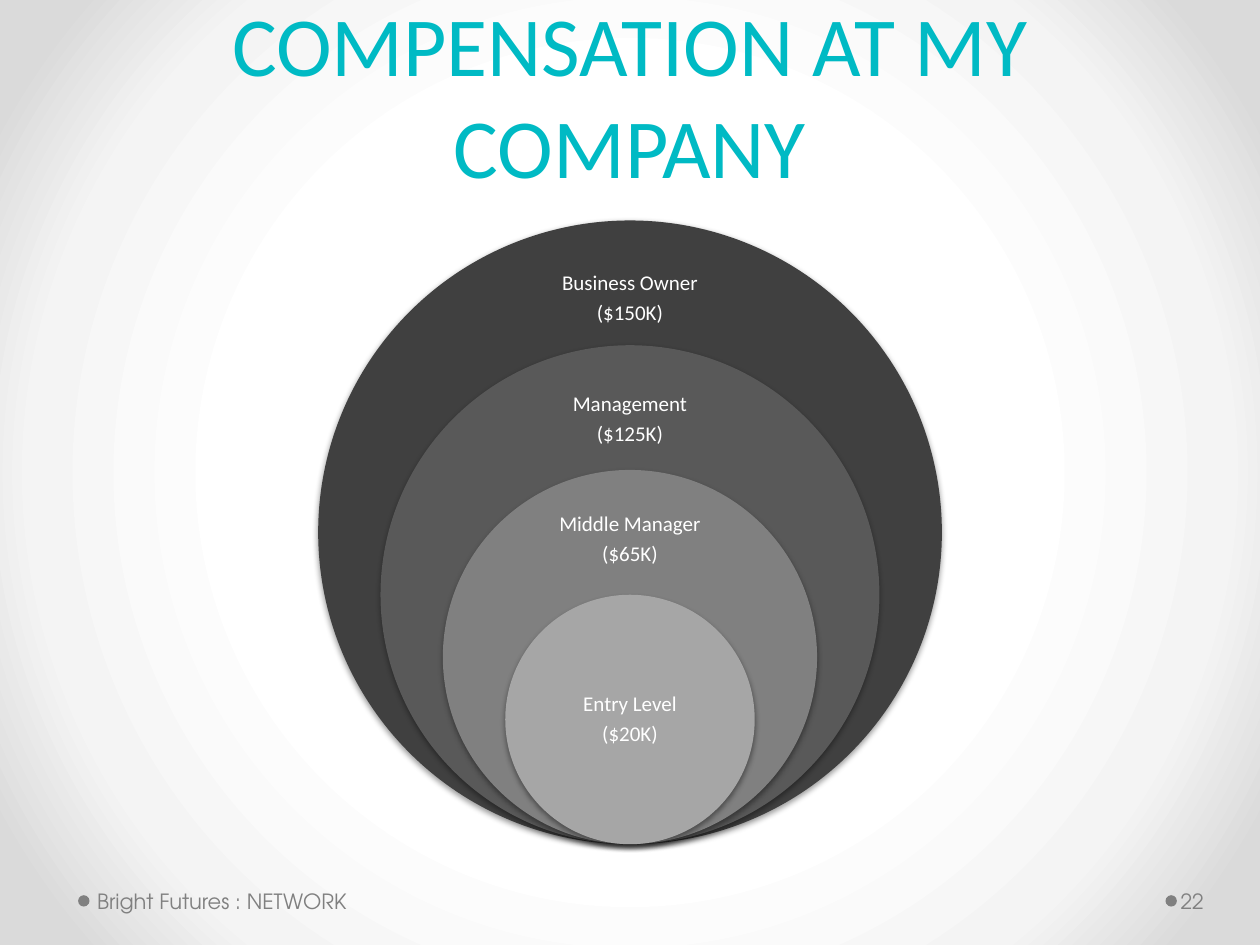
import pptx
import pptx.dml.color
import pptx.enum.shapes
import pptx.enum.text
import pptx.oxml
import pptx.oxml.ns
import pptx.util
from pptx.util import Inches

COLORS = {
    "title": "00BAC4", "label": "FFFFFF", "footer": "808080",
    "Business Owner": "404040", "Management": "595959",
    "Middle Manager": "808080", "Entry Level": "A6A6A6",
}
BACKDROP = ((50, "FFFFFF"), (76, "F4F4F4"), (92, "DADADA"))
# role, pay, distance from the circle's top to the middle of its label
LEVELS = (
    ("Business Owner", "($150K)", 0.62),
    ("Management", "($125K)", 0.59),
    ("Middle Manager", "($65K)", 0.55),
    ("Entry Level", "($20K)", 0.99),
)
MIDDLE = pptx.enum.text.MSO_ANCHOR.MIDDLE
CENTER = pptx.enum.text.PP_ALIGN.CENTER
NAMESPACES = pptx.oxml.ns.nsdecls("a", "p")


def rgb(name):
    return pptx.dml.color.RGBColor.from_string(COLORS[name])


def style_font(paragraph, face, size, color):
    paragraph.font.name = face
    paragraph.font.size = pptx.util.Pt(size)
    paragraph.font.color.rgb = rgb(color)


def set_backdrop(slide):
    """Fill the background with a radial gradient, which needs XML."""
    stops = "".join(
        f'<a:gs pos="{pos * 1000}"><a:srgbClr val="{color}"/></a:gs>'
        for pos, color in BACKDROP)
    background = pptx.oxml.parse_xml(
        f'<p:bg {NAMESPACES}><p:bgPr><a:gradFill rotWithShape="1">'
        f'<a:gsLst>{stops}</a:gsLst><a:path path="circle">'
        '<a:fillToRect l="50000" t="50000" r="50000" b="50000"/></a:path>'
        '</a:gradFill><a:effectLst/></p:bgPr></p:bg>')
    slide.element.cSld.insert(0, background)


def add_soft_shadow(shape):
    shape.element.spPr.append(pptx.oxml.parse_xml(
        f'<a:effectLst {NAMESPACES}><a:outerShdw blurRad="39370" dist="20320" '
        'dir="5400000" rotWithShape="0"><a:srgbClr val="000000">'
        '<a:alpha val="38000"/></a:srgbClr></a:outerShdw></a:effectLst>'))


def add_circle(slide, left, top, diameter, color):
    circle = slide.shapes.add_shape(
        pptx.enum.shapes.MSO_SHAPE.OVAL, Inches(left), Inches(top),
        Inches(diameter), Inches(diameter))
    circle.fill.solid()
    circle.fill.fore_color.rgb = rgb(color)
    circle.line.fill.background()
    return circle


def add_text_frame(slide, left, top, width, height, inset=0):
    box = slide.shapes.add_textbox(
        Inches(left), Inches(top), Inches(width), Inches(height))
    frame = box.text_frame
    frame.word_wrap = True
    frame.vertical_anchor = MIDDLE
    frame.margin_left = Inches(inset)
    frame.margin_right = frame.margin_top = frame.margin_bottom = 0
    return frame


def place_title(slide, left, top, width, height):
    title = slide.shapes.title
    title.left, title.top = Inches(left), Inches(top)
    title.width, title.height = Inches(width), Inches(height)
    frame = title.text_frame
    frame.text = "COMPENSATION AT MY COMPANY"
    frame.auto_size = pptx.enum.text.MSO_AUTO_SIZE.NONE
    frame.vertical_anchor = pptx.enum.text.MSO_ANCHOR.BOTTOM
    heading = frame.paragraphs[0]
    heading.alignment = CENTER
    heading.line_spacing = pptx.util.Pt(58)
    style_font(heading, "Calibri", 48, "title")


def add_pay_circles(slide, left, top, size):
    """Nest the circles on a shared bottom point, each a fifth smaller."""
    step = size / 5
    label_width, label_height = 1.5, 0.6
    for index, (role, pay, label_offset) in enumerate(LEVELS):
        circle_top = top + index * step
        circle = add_circle(slide, left + index * step / 2, circle_top,
                            size - index * step, role)
        add_soft_shadow(circle)
        label = add_text_frame(
            slide, left + (size - label_width) / 2,
            circle_top + label_offset - label_height / 2,
            label_width, label_height)
        label.text = f"{role}\n{pay}"
        for line in label.paragraphs:
            line.alignment = CENTER
            line.line_spacing = 0.9
            line.space_after = pptx.util.Pt(4.2)
            style_font(line, "Calibri", 12, "label")


def add_footer_item(slide, left, top, width, height, text, inset):
    """Put a dot just left of the text's box."""
    dot = 0.09
    marker = add_circle(slide, left - dot - 0.01,
                        top + (height - dot) / 2, dot, "footer")
    marker.shadow.inherit = False
    frame = add_text_frame(slide, left, top, width, height, inset)
    frame.text = text
    style_font(frame.paragraphs[0], "TeX Gyre Adventor", 12, "footer")


def main():
    deck = pptx.Presentation()
    deck.slide_width, deck.slide_height = Inches(10), Inches(7.5)
    slide = deck.slides.add_slide(deck.slide_layouts.get_by_name("Title Only"))
    set_backdrop(slide)
    place_title(slide, 0.5, 0.15, 9, 1.45)
    add_pay_circles(slide, 2.525, 1.75, 4.95)
    add_footer_item(slide, 0.72, 6.95, 3.11, 0.4, "Bright Futures : NETWORK", 0.05)
    add_footer_item(slide, 9.35, 6.95, 0.6, 0.4, "22", 0.02)
    deck.save("out.pptx")


if __name__ == "__main__":
    main()
